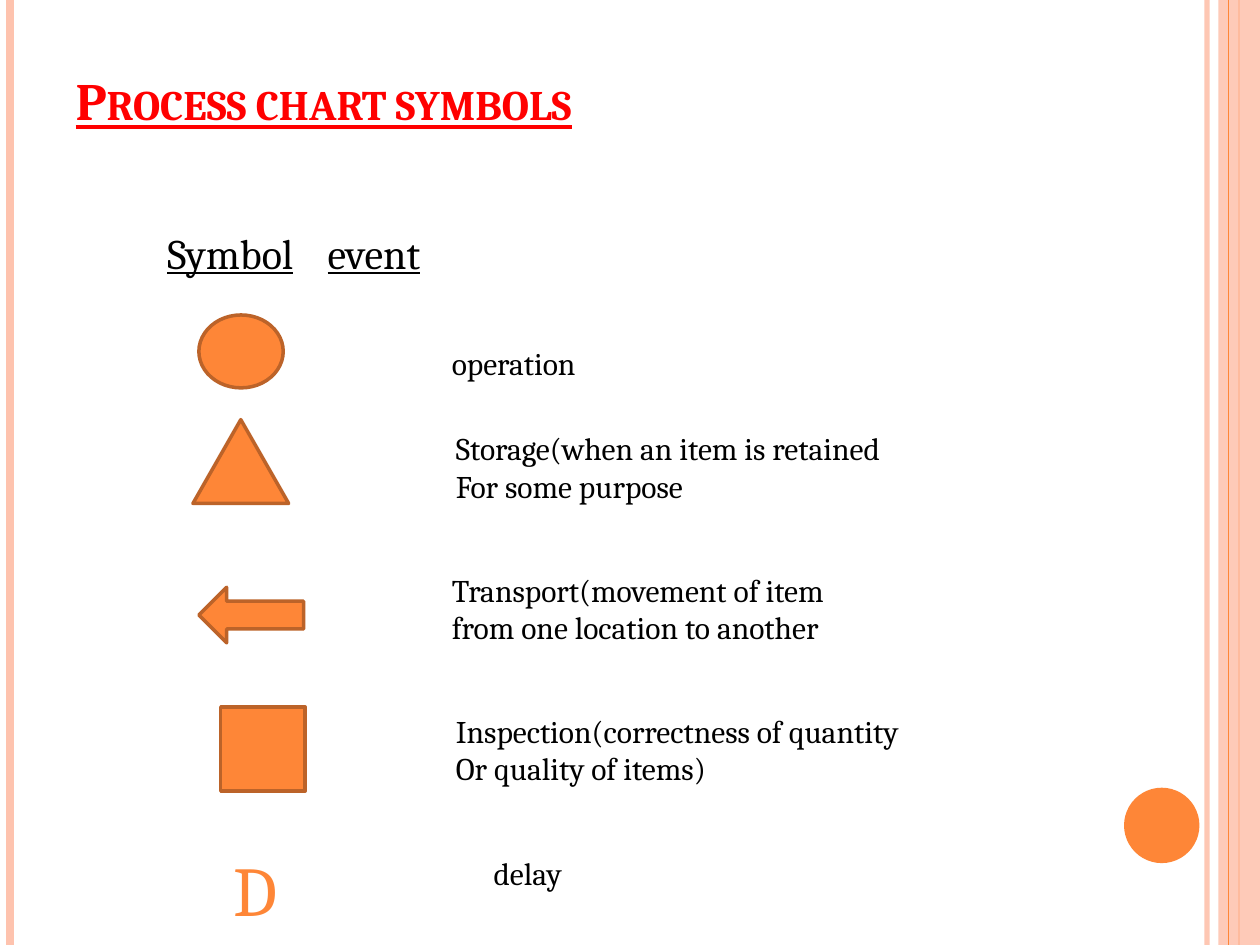
from dataclasses import dataclass

from lxml.etree import SubElement
from pptx import Presentation
from pptx.dml.color import RGBColor
from pptx.enum.shapes import MSO_CONNECTOR, MSO_SHAPE
from pptx.enum.text import MSO_ANCHOR, MSO_AUTO_SIZE, PP_ALIGN
from pptx.oxml.ns import qn
from pptx.util import Cm, Pt


@dataclass(frozen=True)
class Theme:
    """Colours, font and type sizes of the slide."""
    font: str = "Cambria"
    accent: str = "FE8637"
    pale: str = "FEC3AE"
    outline: str = "BC6329"
    heading: str = "FF0000"
    ink: str = "000000"
    title_size: float = 30
    header_size: float = 24
    label_size: float = 18
    letter_size: float = 40


@dataclass(frozen=True)
class Box:
    """A position and size in centimetres."""
    left: float
    top: float
    width: float
    height: float

    def lengths(self) -> tuple:
        """Return the four values as lengths."""
        return Cm(self.left), Cm(self.top), Cm(self.width), Cm(self.height)


@dataclass(frozen=True)
class Symbol:
    """A process chart symbol."""
    kind: MSO_SHAPE
    box: Box


@dataclass(frozen=True)
class Label:
    """Lines of text at a place."""
    lines: tuple
    box: Box


THEME = Theme()
WIDTH, HEIGHT = 25.4, 19.05
SYMBOLS = (
    Symbol(MSO_SHAPE.OVAL, Box(4.01, 6.35, 1.7, 1.47)),
    Symbol(MSO_SHAPE.ISOSCELES_TRIANGLE, Box(3.89, 8.46, 1.93, 1.69)),
    Symbol(MSO_SHAPE.LEFT_ARROW, Box(4.01, 11.84, 2.11, 1.12)),
    Symbol(MSO_SHAPE.RECTANGLE, Box(4.45, 14.25, 1.7, 1.7)),
)
EVENTS = (
    Label(("operation",), Box(8.86, 6.81, 3.33, 1.02)),
    Label(("Storage(when an item is retained", "For some purpose"), Box(8.94, 8.53, 10.59, 1.8)),
    Label(("Transport(movement of item", "from one location to another"), Box(8.86, 11.38, 9.19, 1.8)),
    Label(("Inspection(correctness of quantity", "Or quality of items)"), Box(8.94, 14.22, 10.77, 1.8)),
    Label(("delay",), Box(9.7, 17.09, 2.11, 1.02)),
)
DELAY_LETTER = Label(("D",), Box(4.45, 16.94, 2.34, 1.96))


def add_span(para, text: str, *, size: float, color: str = THEME.ink, bold: bool = False,
             underline: bool = False, small_caps: bool = False) -> None:
    """Append formatted text to a paragraph."""
    span = para.add_run()
    span.text = text
    span.font.name = THEME.font
    span.font.size = Pt(size)
    span.font.color.rgb = RGBColor.from_string(color)
    span.font.bold = bold
    span.font.underline = underline
    if small_caps:
        span.font._element.set("cap", "small")


def set_opacity(shape, percent: int) -> None:
    """Make the colours of a shape partly transparent."""
    for color in shape._element.spPr.iter(qn("a:srgbClr")):
        SubElement(color, qn("a:alpha")).set("val", str(percent * 1000))


def add_rule(page, x: float, color: str, weight: float):
    """Draw a vertical line over the full page height."""
    rule = page.shapes.add_connector(MSO_CONNECTOR.STRAIGHT, Cm(x), Cm(0), Cm(x), Cm(HEIGHT))
    rule.line.color.rgb = RGBColor.from_string(color)
    rule.line.width = Pt(weight)
    SubElement(rule._element.spPr, qn("a:effectLst"))
    return rule


def add_figure(page, kind: MSO_SHAPE, box: Box, *, fill: str, line: str | None = None):
    """Draw a filled preset shape, outlined when a line colour is given."""
    figure = page.shapes.add_shape(kind, *box.lengths())
    figure.shadow.inherit = False
    figure.fill.solid()
    figure.fill.fore_color.rgb = RGBColor.from_string(fill)
    if line:
        figure.line.color.rgb = RGBColor.from_string(line)
        figure.line.width = Pt(2)
    else:
        figure.line.fill.background()
    return figure


def add_label(page, label: Label, *, size: float, color: str = THEME.ink, wrap: bool = False) -> None:
    """Write the lines of a label as paragraphs of a text box."""
    frame = page.shapes.add_textbox(*label.box.lengths()).text_frame
    frame.word_wrap = wrap
    frame.auto_size = MSO_AUTO_SIZE.SHAPE_TO_FIT_TEXT
    for index, line in enumerate(label.lines):
        para = frame.paragraphs[0] if index == 0 else frame.add_paragraph()
        add_span(para, line, size=size, color=color)


def place(holder, box: Box, anchor: MSO_ANCHOR):
    """Move a placeholder and return its left-aligned first paragraph."""
    holder.left, holder.top, holder.width, holder.height = box.lengths()
    holder.text_frame.vertical_anchor = anchor
    holder.text_frame.auto_size = MSO_AUTO_SIZE.NONE
    para = holder.text_frame.paragraphs[0]
    para.alignment = PP_ALIGN.LEFT
    return para


def draw_frame(page) -> None:
    """Draw the decorated page edges."""
    set_opacity(add_rule(page, 24.33, THEME.pale, 3), 93)
    add_rule(page, 0.2, THEME.pale, 4.5)
    band = add_figure(page, MSO_SHAPE.RECTANGLE, Box(24.56, 0, 0.84, HEIGHT), fill=THEME.pale)
    set_opacity(band, 87)
    axis = add_rule(page, 24.98, THEME.accent, 1.5)
    axis.begin_connect(band, 0)
    axis.end_connect(band, 2)
    axis._element.addnext(band._element)
    add_rule(page, 24.77, THEME.accent, 0.75)
    add_figure(page, MSO_SHAPE.OVAL, Box(22.66, 15.88, 1.52, 1.52), fill=THEME.accent)


def write_headings(page) -> None:
    """Fill the title and the column headings."""
    title = place(page.shapes.title, Box(1.27, 0.76, 20.75, 2.01), MSO_ANCHOR.BOTTOM)
    add_span(title, "Process chart symbols", size=THEME.title_size, color=THEME.heading,
             bold=True, underline=True, small_caps=True)
    header = place(page.placeholders[1], Box(1.27, 4.45, 20.75, 13.54), MSO_ANCHOR.TOP)
    header.space_before = Pt(6)
    properties = header._p.get_or_add_pPr()
    properties.set("marL", "0")
    properties.set("indent", str(Cm(1.85)))
    SubElement(properties, qn("a:buNone"))
    tab = SubElement(SubElement(properties, qn("a:tabLst")), qn("a:tab"))
    tab.set("pos", str(Cm(5.08)))
    tab.set("algn", "l")
    add_span(header, "Symbol", size=THEME.header_size, underline=True)
    add_span(header, "\t", size=THEME.header_size)
    add_span(header, "event", size=THEME.header_size, underline=True)


def main() -> None:
    """Build and save the deck."""
    deck = Presentation()
    deck.slide_width, deck.slide_height = Cm(WIDTH), Cm(HEIGHT)
    page = deck.slides.add_slide(deck.slide_layouts[1])
    draw_frame(page)
    write_headings(page)
    for symbol in SYMBOLS:
        add_figure(page, symbol.kind, symbol.box, fill=THEME.accent, line=THEME.outline)
    for event in EVENTS:
        add_label(page, event, size=THEME.label_size)
    add_label(page, DELAY_LETTER, size=THEME.letter_size, color=THEME.accent, wrap=True)
    deck.save("out.pptx")


if __name__ == "__main__":
    main()
